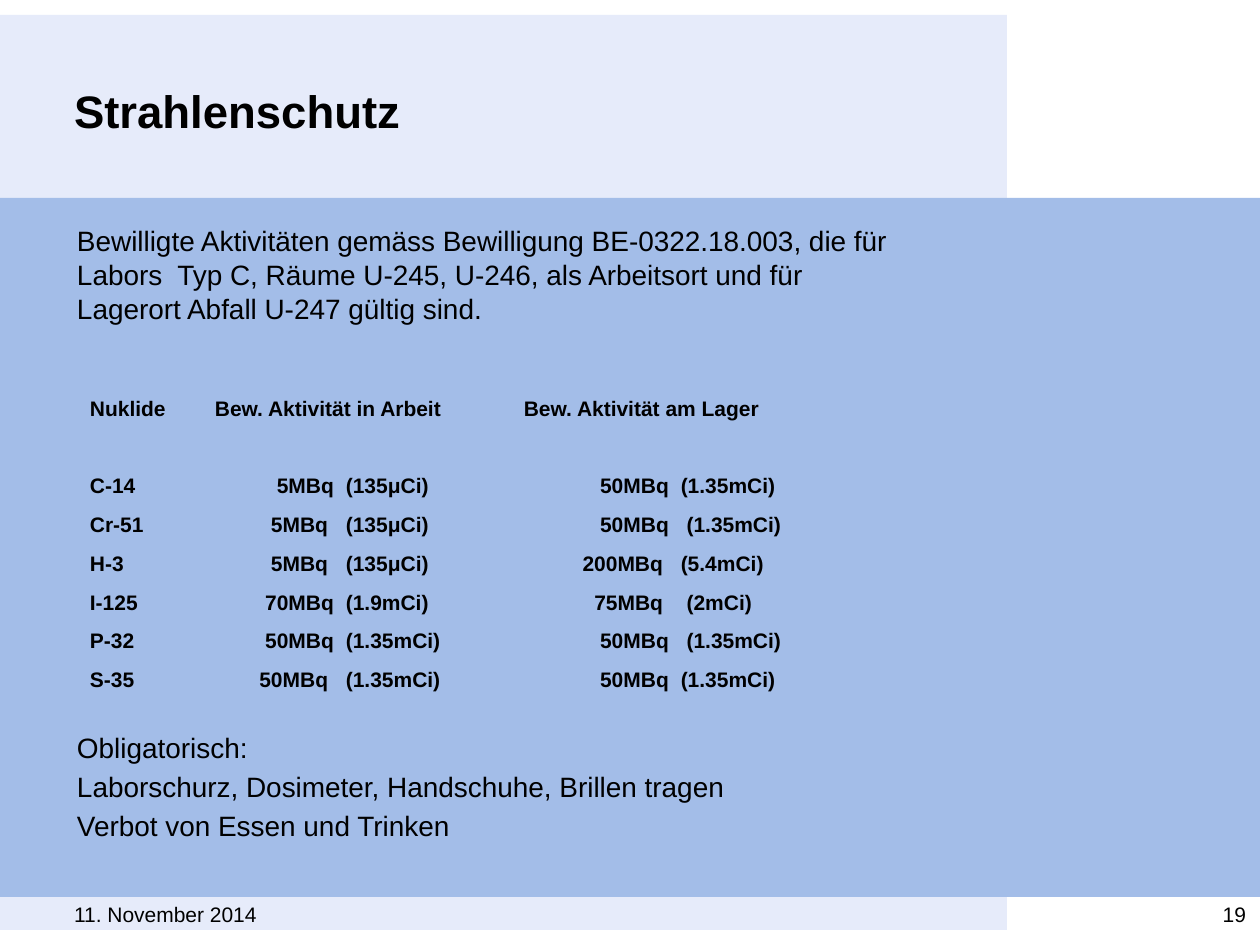
from dataclasses import dataclass

from pptx import Presentation
from pptx.dml.color import RGBColor
from pptx.enum.shapes import MSO_SHAPE
from pptx.enum.text import MSO_ANCHOR, PP_ALIGN
from pptx.oxml.ns import qn
from pptx.util import Emu, Pt

SCALE = 914400 / 126
PLAIN_STYLE = "{2D5ABB26-0587-4C30-8999-92F81FD0307C}"


@dataclass(frozen=True)
class Box:
    left: int
    top: int
    width: int
    height: int


@dataclass(frozen=True)
class Band:
    box: Box
    fill: str


@dataclass(frozen=True)
class Note:
    box: Box
    lines: tuple[str, ...]
    size: int = 12
    bold: bool = False
    right: bool = False
    pad: int = 0
    spacing: float = 1.0
    before: int = 0


BANDS = (
    Band(Box(0, 15, 1007, 915), "E6EBFA"),
    Band(Box(0, 198, 1260, 699), "A3BDE8"),
)

NOTES = (
    Note(Box(74, 89, 912, 112), ("Strahlenschutz",), size=26, bold=True, spacing=0.9),
    Note(Box(74, 902, 525, 25), ("11. November 2014",)),
    Note(Box(1197, 902, 49, 25), ("19",), right=True),
    Note(
        Box(64, 218, 837, 136),
        (
            "Bewilligte Aktivitäten gemäss Bewilligung BE-0322.18.003, die für "
            "Labors  Typ C, Räume U-245, U-246, als Arbeitsort und für "
            "Lagerort Abfall U-247 gültig sind.",
        ),
        size=16,
        pad=1,
    ),
    Note(
        Box(64, 727, 1052, 123),
        (
            "Obligatorisch:",
            "Laborschurz, Dosimeter, Handschuhe, Brillen tragen",
            "Verbot von Essen und Trinken",
        ),
        size=16,
        pad=1,
        spacing=0.95,
        before=4,
    ),
)

GRID = Box(84, 383, 804, 305)
COLS = (125, 131, 178, 157, 194, 19)
ROWS = (38, 36) + (38, 39) * 3
HEADS = ((0, 0, "Nuklide"), (1, 2, "Bew. Aktivität in Arbeit"), (3, 5, "Bew. Aktivität am Lager"))
DATA = (
    ("C-14", "5MBq", "(135μCi)", "50MBq", "(1.35mCi)"),
    ("Cr-51", "5MBq ", "(135μCi)", "50MBq", " (1.35mCi)"),
    ("H-3", "5MBq ", "(135μCi)", "200MBq ", "(5.4mCi)"),
    ("I-125", "70MBq", "(1.9mCi)", "75MBq ", " (2mCi)"),
    ("P-32", "50MBq", "(1.35mCi)", "50MBq", " (1.35mCi)"),
    ("S-35", "50MBq ", "(1.35mCi)", "50MBq", "(1.35mCi)"),
)


def px(n: int) -> Emu:
    return Emu(round(n * SCALE))


def place(box: Box) -> tuple[Emu, ...]:
    return px(box.left), px(box.top), px(box.width), px(box.height)


def color(code: str) -> RGBColor:
    return RGBColor.from_string(code)


def write(para, text: str, *, size=12, bold=False, right=False, spacing=1.0, before=0) -> None:
    para.alignment = PP_ALIGN.RIGHT if right else PP_ALIGN.LEFT
    para.line_spacing = spacing
    para.space_before = Pt(before)
    run = para.add_run()
    run.text = text
    font = run.font
    font.name = "Arial"
    font.size = Pt(size)
    font.bold = bold
    font.color.rgb = color("000000")


def draw_band(slide, band: Band) -> None:
    shape = slide.shapes.add_shape(MSO_SHAPE.RECTANGLE, *place(band.box))
    shape.shadow.inherit = False
    shape.fill.solid()
    shape.fill.fore_color.rgb = color(band.fill)
    shape.line.fill.background()


def draw_note(slide, note: Note) -> None:
    frame = slide.shapes.add_textbox(*place(note.box)).text_frame
    frame.word_wrap = True
    frame.vertical_anchor = MSO_ANCHOR.TOP
    frame.margin_left = frame.margin_right = px(13 * note.pad)
    frame.margin_top = frame.margin_bottom = px(6 * note.pad)
    for i, line in enumerate(note.lines):
        para = frame.add_paragraph() if i else frame.paragraphs[0]
        write(para, line, size=note.size, bold=note.bold, right=note.right,
              spacing=note.spacing, before=note.before if i else 0)


def draw_table(slide) -> None:
    table = slide.shapes.add_table(len(ROWS), len(COLS), *place(GRID)).table
    table.first_row = table.horz_banding = False
    table._tbl.tblPr.find(qn("a:tableStyleId")).text = PLAIN_STYLE
    for col, width in zip(table.columns, COLS):
        col.width = px(width)
    for row, height in zip(table.rows, ROWS):
        row.height = px(height)
    for cell in table.iter_cells():
        cell.fill.background()
        cell.vertical_anchor = MSO_ANCHOR.BOTTOM
        cell.margin_left = cell.margin_right = px(6)
        cell.margin_top = cell.margin_bottom = 0
    for first, last, text in HEADS:
        cell = table.cell(0, first)
        if last > first:
            cell.merge(table.cell(0, last))
        write(cell.text_frame.paragraphs[0], text, bold=True, spacing=1.5)
    for r, values in enumerate(DATA, start=2):
        for c, text in enumerate(values):
            para = table.cell(r, c).text_frame.paragraphs[0]
            write(para, text, bold=True, right=c in (1, 3), spacing=1.5)


def main() -> None:
    deck = Presentation()
    deck.slide_width, deck.slide_height = px(1260), px(945)
    slide = deck.slides.add_slide(deck.slide_layouts[6])
    for band in BANDS:
        draw_band(slide, band)
    draw_table(slide)
    for note in NOTES:
        draw_note(slide, note)
    deck.save("out.pptx")


if __name__ == "__main__":
    main()
